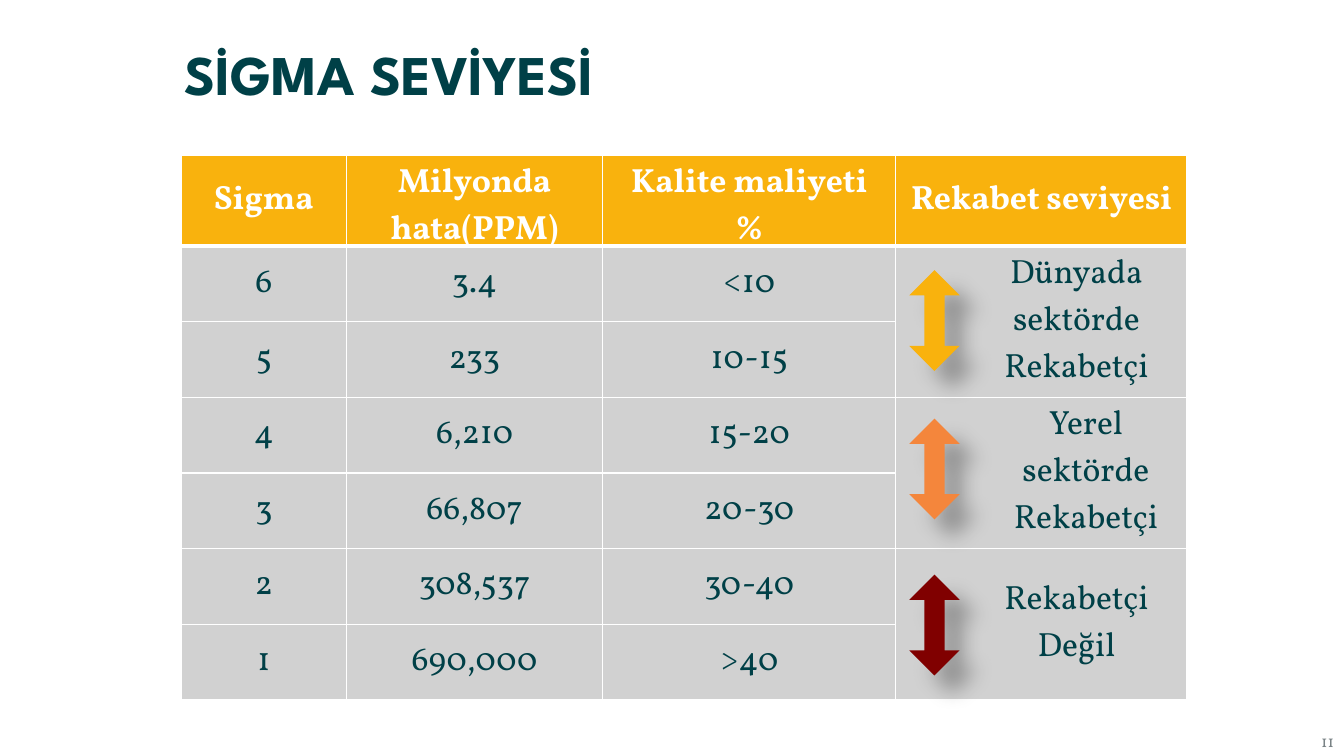
from lxml.etree import SubElement
from pptx import Presentation
from pptx.dml.color import RGBColor
from pptx.enum.shapes import MSO_SHAPE
from pptx.enum.text import MSO_ANCHOR, PP_ALIGN
from pptx.oxml import parse_xml
from pptx.oxml.ns import nsdecls, qn
from pptx.util import Pt

TEAL = RGBColor(0x00, 0x40, 0x47)
GRAY = RGBColor(0x79, 0x82, 0x85)
AMBER = RGBColor(0xF9, 0xB2, 0x0D)
ORANGE = RGBColor(0xF4, 0x86, 0x3C)
MAROON = RGBColor(0x80, 0x00, 0x00)
WHITE = RGBColor(0xFF, 0xFF, 0xFF)
BLACK = RGBColor(0x00, 0x00, 0x00)

TITLE_FORMAT = {"name": "League Spartan", "size": Pt(40), "bold": True}
HEADER_FORMAT = {"name": "Vollkorn", "size": Pt(24), "bold": True}
BODY_FORMAT = {"name": "Vollkorn", "size": Pt(24), "bold": False}
NUMBER_FORMAT = {"name": "Vollkorn", "size": Pt(12), "bold": False}

HEADERS = ["Sigma", "Milyonda hata(PPM)", "Kalite maliyeti\n%", "Rekabet seviyesi"]
SIGMA_ROWS = [
    ["6", "3.4", "<10"],
    ["5", "233", "10-15"],
    ["4", "6,210", "15-20"],
    ["3", "66,807", "20-30"],
    ["2", "308,537", "30-40"],
    ["1", "690,000", ">40"],
]
LEVELS = [
    ("Dünyada sektörde Rekabetçi", 50, 82, AMBER),
    ("Yerel sektörde Rekabetçi", 63.5, 188, ORANGE),
    ("Rekabetçi Değil", 50, 299.5, MAROON),
]
COLUMN_WIDTHS = [118, 183, 209.5, 208]
HEADER_HEIGHT = 64.5
ROW_HEIGHT = 54


def write_text(frame, text, formats, color, alignment):
    frame.text = text
    frame.word_wrap = True
    for paragraph in frame.paragraphs:
        paragraph.alignment = alignment
        paragraph.font.color.rgb = color
        for name, value in formats.items():
            setattr(paragraph.font, name, value)


def add_title(slide, left, top, width, height):
    title = slide.shapes.title
    box = {"left": left, "top": top, "width": width, "height": height}
    for name, value in box.items():
        setattr(title, name, Pt(value))
    title.text_frame.vertical_anchor = MSO_ANCHOR.MIDDLE
    write_text(title.text_frame, "SİGMA SEVİYESİ", TITLE_FORMAT, TEAL, PP_ALIGN.LEFT)


def add_page_number(slide, left, top, width, height):
    box = slide.shapes.add_textbox(Pt(left), Pt(top), Pt(width), Pt(height))
    box.text_frame.vertical_anchor = MSO_ANCHOR.MIDDLE
    write_text(box.text_frame, "11", NUMBER_FORMAT, GRAY, PP_ALIGN.RIGHT)


def style_cell(cell, row):
    cell.vertical_anchor = MSO_ANCHOR.MIDDLE
    cell.fill.solid()
    cell.fill.fore_color.rgb = AMBER if row == 0 else BLACK
    properties = cell._tc.get_or_add_tcPr()
    if row > 0:
        color = properties.find(qn("a:solidFill"))[0]
        SubElement(color, qn("a:alpha"), val="18000")
    widths = {"lnL": 1, "lnR": 1, "lnT": 3 if row == 1 else 1, "lnB": 3 if row == 0 else 1}
    for position, (side, width) in enumerate(widths.items()):
        border = parse_xml(
            f'<a:{side} {nsdecls("a")} w="{Pt(width)}"><a:solidFill>'
            f'<a:srgbClr val="{WHITE}"/></a:solidFill></a:{side}>'
        )
        properties.insert(position, border)


def add_level_arrow(slide, left, top, color):
    arrow = slide.shapes.add_shape(
        MSO_SHAPE.UP_DOWN_ARROW, Pt(left), Pt(top), Pt(36), Pt(72)
    )
    arrow.adjustments[0] = 0.5
    arrow.adjustments[1] = 0.4
    arrow.fill.solid()
    arrow.fill.fore_color.rgb = color
    arrow.line.fill.background()
    arrow.shadow.inherit = False
    effects = arrow._element.spPr.find(qn("a:effectLst"))
    shadow = SubElement(
        effects, qn("a:outerShdw"), blurRad=str(Pt(15)), dist=str(Pt(18)),
        dir="2700000", algn="tl", rotWithShape="0",
    )
    shadow_color = SubElement(shadow, qn("a:srgbClr"), val=str(BLACK))
    SubElement(shadow_color, qn("a:alpha"), val="30000")


def add_sigma_table(slide, left, top):
    height = HEADER_HEIGHT + ROW_HEIGHT * len(SIGMA_ROWS)
    table = slide.shapes.add_table(
        len(SIGMA_ROWS) + 1, len(HEADERS),
        Pt(left), Pt(top), Pt(sum(COLUMN_WIDTHS)), Pt(height),
    ).table
    for column, width in zip(table.columns, COLUMN_WIDTHS):
        column.width = Pt(width)
    for index, row in enumerate(table.rows):
        row.height = Pt(ROW_HEIGHT if index else HEADER_HEIGHT)
        for cell in row.cells:
            style_cell(cell, index)
    for index, values in enumerate([HEADERS] + SIGMA_ROWS):
        formats, color = (BODY_FORMAT, TEAL) if index else (HEADER_FORMAT, WHITE)
        for column, text in enumerate(values):
            frame = table.cell(index, column).text_frame
            write_text(frame, text, formats, color, PP_ALIGN.CENTER)
    level_column = len(HEADERS) - 1
    for index, (text, indent, arrow_top, color) in enumerate(LEVELS):
        first_row = 1 + 2 * index
        cell = table.cell(first_row, level_column)
        cell.merge(table.cell(first_row + 1, level_column))
        write_text(cell.text_frame, text, BODY_FORMAT, TEAL, PP_ALIGN.CENTER)
        properties = cell.text_frame.paragraphs[0]._p.get_or_add_pPr()
        properties.set("marL", str(Pt(indent)))
        properties.set("indent", "0")
        arrow_left = left + sum(COLUMN_WIDTHS[:level_column]) + 9.5
        add_level_arrow(slide, arrow_left, top + arrow_top, color)


def main():
    presentation = Presentation()
    presentation.slide_width = Pt(960)
    presentation.slide_height = Pt(540)
    slide = presentation.slides.add_slide(presentation.slide_layouts[5])
    add_title(slide, 124.5, 27.5, 824.5, 49.5)
    add_page_number(slide, 893.5, 518.5, 66.5, 22)
    add_sigma_table(slide, 129.5, 111)
    presentation.save("out.pptx")


if __name__ == "__main__":
    main()
